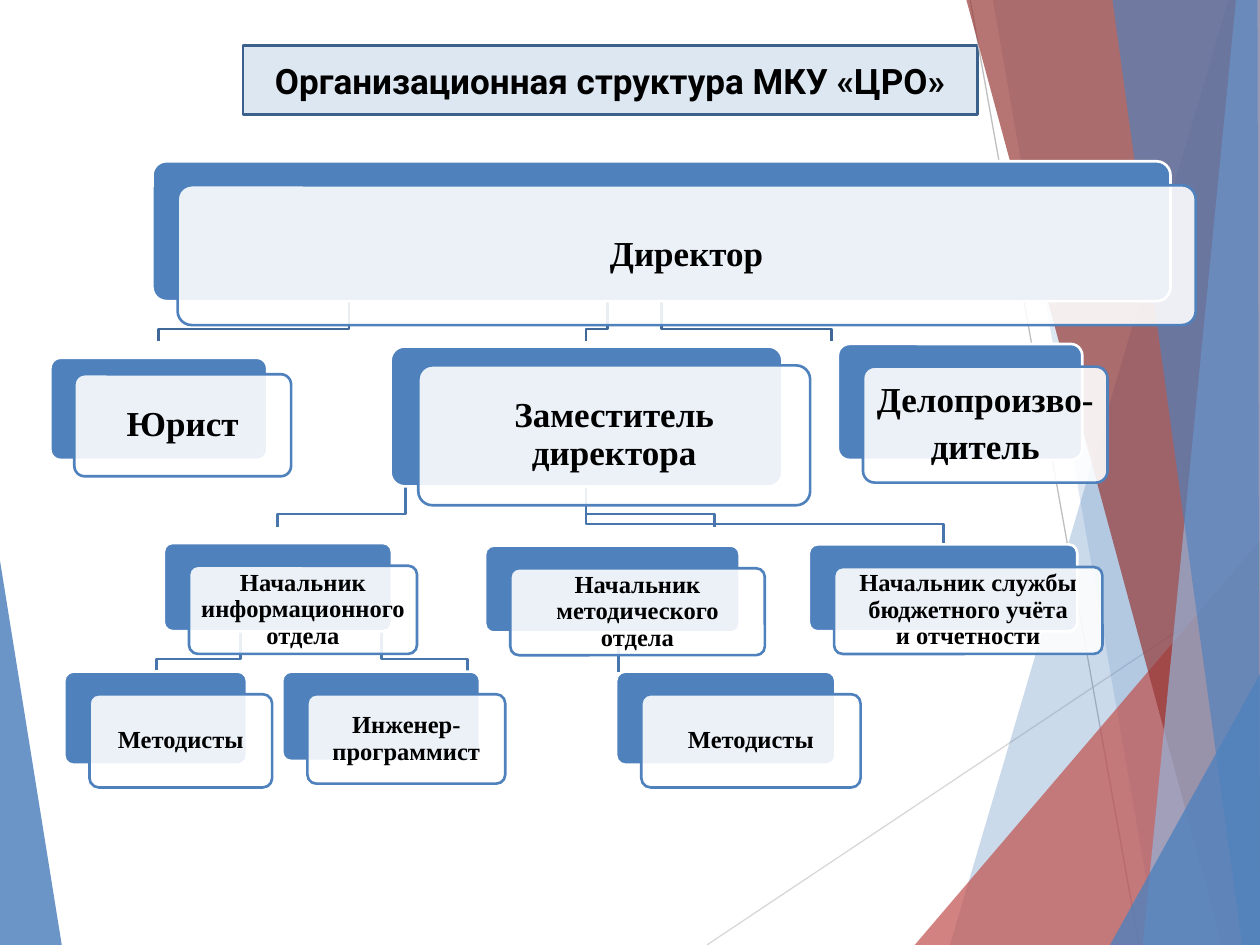
from lxml import etree
from pptx import Presentation
from pptx.dml.color import RGBColor
from pptx.enum.shapes import MSO_CONNECTOR as Connector, MSO_SHAPE as Shape
from pptx.enum.text import MSO_ANCHOR as Anchor, MSO_AUTO_SIZE as AutoSize, PP_ALIGN as Align
from pptx.oxml import parse_xml
from pptx.oxml.ns import nsdecls, qn
from pptx.util import Inches, Pt

COLORS = {
    "blue": "4F81BD", "red": "C0504D", "dark_red": "963634", "light_blue": "96B4D8",
    "white": "FFFFFF", "black": "000000", "title_fill": "DCE7F1", "title_line": "3B608C",
    "upper_link": "3F6798", "lower_link": "4875AC", "ray": "D8D8D8", "dark_ray": "BFBFBF",
}
PANELS = [
    ("blue", 84, [(0, 4.45), (0.49, 7.5), (0, 7.5)]),
    ("blue", 29, [(9.75, 0), (7.54, 7.5), (10, 7.5), (10, 0)]),
    ("blue", 19, [(7.88, 0), (9.19, 7.5), (10, 7.5), (10, 0)]),
    ("red", 71, [(7.26, 7.5), (10, 4.29), (10, 7.5)]),
    ("dark_red", 69, [(7.67, 0), (9.7, 7.5), (10, 7.5), (10, 0)]),
    ("light_blue", 69, [(9.81, 0), (9.07, 7.5), (10, 7.5), (10, 0)]),
    ("blue", 64, [(8.83, 0), (9.86, 7.5), (10, 7.5), (9.98, 0)]),
    ("blue", 79, [(8.81, 7.5), (10, 5.35), (10, 7.5)]),
]
RAYS = [("ray", (5.61, 7.5), (10, 4.57)), ("dark_ray", (7.7, 0), (9.04, 7.5))]
LEVELS = {"director": 2.39, "deputy": 3.86, "heads": 5.01}
ELBOWS = [
    ("director", 5.25, 6.6), ("director", 4.82, 4.65), ("director", 2.77, 1.26),
    ("deputy", 4.65, 5.67), ("deputy", 4.65, 7.49, 0.3, 0.46), ("deputy", 3.22, 2.2),
    ("heads", 3.03, 3.71), ("heads", 1.91, 1.24),
]
STAFF = [
    ("Директор", (1.21, 1.28, 8.08, 1.11), 20, (0.2, 0.19)),
    ("Юрист", (0.4, 2.84, 1.72, 0.81), 20, (0.19, 0.13)),
    ("Заместитель директора", (3.1, 2.75, 3.11, 1.11), 20, (0.22, 0.15)),
    ("Делопроизво-\nдитель", (6.65, 2.73, 1.94, 0.92), 20),
    ("Начальник информационного отдела", (1.3, 4.31, 1.81, 0.7), 14),
    ("Начальник методического отдела", (3.85, 4.33, 2.02, 0.69), 14),
    ("Начальник службы\vбюджетного учёта\vи отчетности", (6.42, 4.32, 2.13, 0.69), 14),
    ("Методисты", (0.51, 5.33, 1.45, 0.74), 14),
    ("Инженер-программист", (2.24, 5.33, 1.57, 0.71), 14),
    ("Методисты", (4.89, 5.33, 1.74, 0.74), 14),
]


def rgb(name):
    """Return the named colour."""
    return RGBColor.from_string(COLORS[name])


def fill_shape(shape, color, opacity=100):
    """Fill a shape with a colour of the given opacity in percent."""
    shape.fill.solid()
    shape.fill.fore_color.rgb = rgb(color)
    if opacity < 100:
        tint = shape.fill._xPr.find(qn("a:solidFill"))[0]
        etree.SubElement(tint, qn("a:alpha")).set("val", str(opacity * 1000))


def outline(shape, color, width=1.5):
    """Give a shape or connector a solid line."""
    shape.line.color.rgb = rgb(color)
    shape.line.width = Pt(width)


def add_polyline(page, points, close):
    """Draw a shadowless outline through points given in inches."""
    corners = [(Inches(x), Inches(y)) for x, y in points]
    builder = page.shapes.build_freeform(*corners[0])
    builder.add_line_segments(corners[1:], close=close)
    shape = builder.convert_to_shape()
    shape.shadow.inherit = False
    return shape


def add_line(page, start, end, color, width):
    """Draw a straight shadowless connector."""
    line = page.shapes.add_connector(
        Connector.STRAIGHT, *(Inches(value) for value in (*start, *end)))
    outline(line, color, width)
    etree.SubElement(line._element.spPr, qn("a:effectLst"))


def add_backdrop(page):
    """Draw the rays and translucent panels along the slide edges."""
    for index, (color, opacity, points) in enumerate(PANELS):
        panel = add_polyline(page, points, close=True)
        fill_shape(panel, color, opacity)
        panel.line.fill.background()
        if index == 0:
            for ray_color, start, end in RAYS:
                add_line(page, start, end, ray_color, 0.75)


def add_title(page, text, box):
    """Turn the title placeholder into a rounded banner."""
    title = page.shapes.title
    title.left, title.top, title.width, title.height = (Inches(value) for value in box)
    title._element.spPr.append(parse_xml(
        f'<a:prstGeom {nsdecls("a")} prst="roundRect"><a:avLst/></a:prstGeom>'))
    fill_shape(title, "title_fill")
    outline(title, "title_line")
    frame = title.text_frame
    frame.text = text
    frame.auto_size = AutoSize.NONE
    frame.vertical_anchor = Anchor.MIDDLE
    para = frame.paragraphs[0]
    para.alignment = Align.CENTER
    set_font(para, "Roboto", 20)


def set_font(para, name, size):
    """Set a bold black font on a paragraph."""
    font = para.font
    font.name, font.size, font.bold = name, Pt(size), True
    font.color.rgb = rgb("black")


def add_elbow(page, level, start_x, end_x, bend=0.22, drop=0.32):
    """Link a parent to a child with a stepped line below the given level."""
    top = LEVELS[level]
    points = [(start_x, top), (start_x, top + bend), (end_x, top + bend), (end_x, top + drop)]
    elbow = add_polyline(page, points, close=False)
    elbow.fill.background()
    outline(elbow, "upper_link" if level == "director" else "lower_link")


def add_plate(page, box, fill, opacity, line):
    """Draw one rounded plate of a staff card."""
    plate = page.shapes.add_shape(Shape.ROUNDED_RECTANGLE, *(Inches(value) for value in box))
    plate.adjustments[0] = 0.1
    plate.shadow.inherit = False
    fill_shape(plate, fill, opacity)
    outline(plate, line)
    return plate


def add_card(page, text, box, size, offset=(0.2, 0.18)):
    """Draw a blue plate with a shifted translucent label plate over it."""
    left, top, width, height = box
    add_plate(page, box, "blue", 100, "white")
    label = add_plate(
        page, (left + offset[0], top + offset[1], width, height), "white", 89, "blue")
    frame = label.text_frame
    frame.word_wrap = True
    frame.vertical_anchor = Anchor.MIDDLE
    frame.margin_left = frame.margin_right = Inches(0.05)
    frame.margin_top = frame.margin_bottom = Inches(0.05)
    frame.text = text
    for para in frame.paragraphs:
        para.alignment = Align.CENTER
        para.line_spacing = 0.9
        para.space_after = Pt(5)
        set_font(para, "Times New Roman", size)


def add_chart_of_staff(page):
    """Draw the links first and the staff cards over them."""
    for elbow in ELBOWS:
        add_elbow(page, *elbow)
    add_line(page, (4.91, LEVELS["heads"]), (4.91, 5.33), "lower_link", 1.5)
    for card in STAFF:
        add_card(page, *card)


def main():
    """Build the slide and save the deck."""
    deck = Presentation()
    deck.slide_width, deck.slide_height = Inches(10), Inches(7.5)
    page = deck.slides.add_slide(deck.slide_layouts[5])
    add_backdrop(page)
    add_title(page, "Организационная структура МКУ «ЦРО»", (1.93, 0.36, 5.83, 0.55))
    add_chart_of_staff(page)
    deck.save("out.pptx")


if __name__ == "__main__":
    main()
